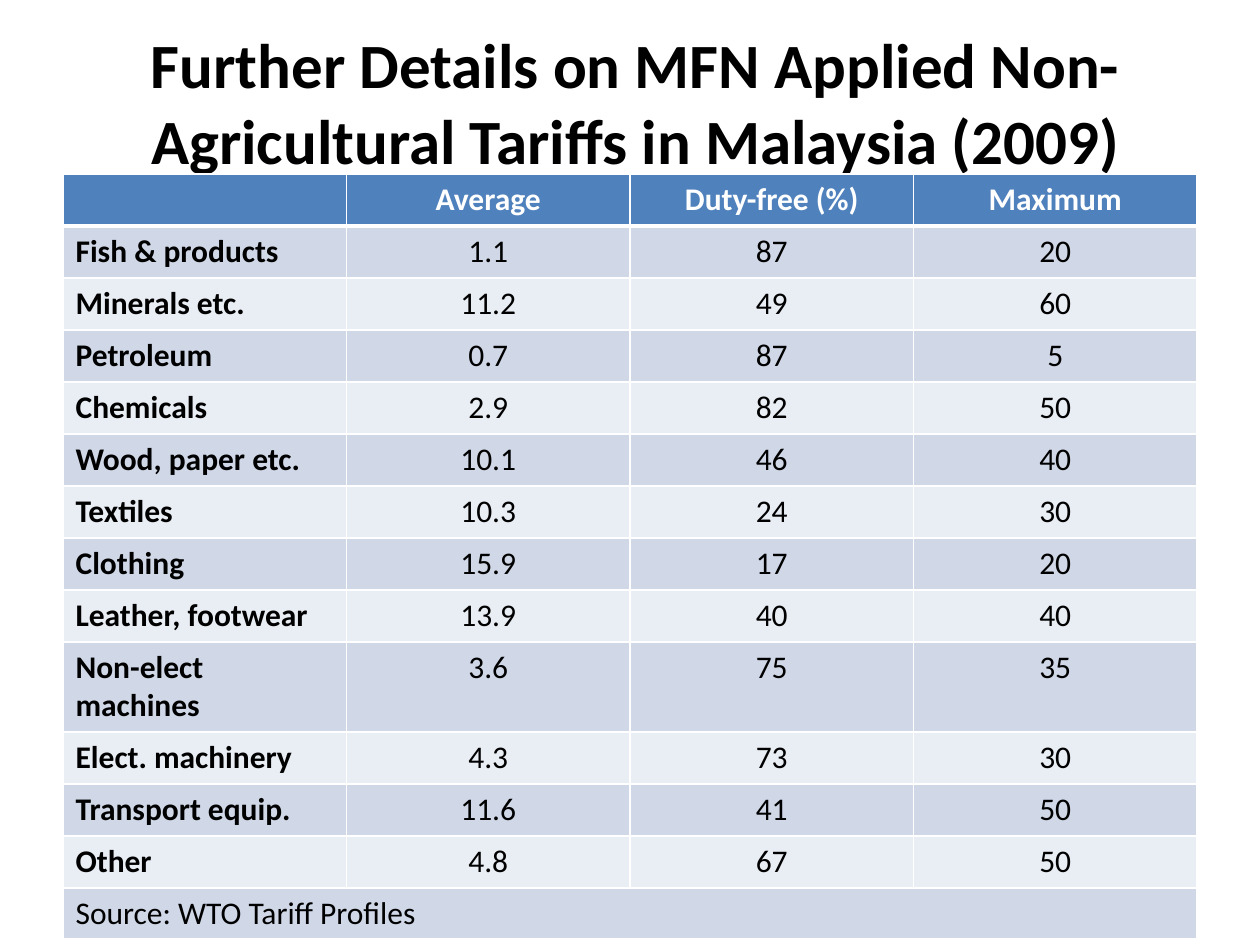
import pptx
import pptx.dml.color
import pptx.enum.text
import pptx.oxml.ns
import pptx.util
from lxml import etree

PX_PER_INCH = 126
FONT = "Calibri"
BLACK, WHITE = "000000", "FFFFFF"
HEADER_FILL = "4F81BD"
BAND_FILLS = ("D0D8E8", "E9EDF4")
ROW_HEIGHT, TALL_ROW_HEIGHT, SOURCE_ROW_HEIGHT = 52, 90, 49
TITLE = "Further Details on MFN Applied Non- Agricultural Tariffs in Malaysia (2009)"
SOURCE = "Source: WTO Tariff Profiles"
HEADINGS = ("", "Average", "Duty-free (%)", "Maximum")
TALL_PRODUCT = "Non-elect machines"
TARIFFS = (
    ("Fish & products", "1.1", "87", "20"),
    ("Minerals etc.", "11.2", "49", "60"),
    ("Petroleum", "0.7", "87", "5"),
    ("Chemicals", "2.9", "82", "50"),
    ("Wood, paper etc.", "10.1", "46", "40"),
    ("Textiles", "10.3", "24", "30"),
    ("Clothing", "15.9", "17", "20"),
    ("Leather, footwear", "13.9", "40", "40"),
    (TALL_PRODUCT, "3.6", "75", "35"),
    ("Elect. machinery", "4.3", "73", "30"),
    ("Transport equip.", "11.6", "41", "50"),
    ("Other", "4.8", "67", "50"),
)


def px(length):
    """Turn a length in px into EMU."""
    return pptx.util.Inches(length / PX_PER_INCH)


def rgb(value):
    """Turn a hex string into a colour."""
    return pptx.dml.color.RGBColor.from_string(value)


def write(frame, text, size, colour, bold, centred):
    """Fill a text frame with one formatted paragraph."""
    frame.text = text
    para = frame.paragraphs[0]
    align = pptx.enum.text.PP_ALIGN
    para.alignment = align.CENTER if centred else align.LEFT
    for span in para.runs:
        span.font.name = FONT
        span.font.size = pptx.util.Pt(size)
        span.font.bold = bold
        span.font.color.rgb = rgb(colour)


def set_borders(cell, top, bottom):
    """Give a cell white borders, with top and bottom widths in points."""
    properties = cell._tc.get_or_add_tcPr()
    qn = pptx.oxml.ns.qn
    for side, width in (("L", 1), ("R", 1), ("T", top), ("B", bottom)):
        line = etree.SubElement(properties, qn(f"a:ln{side}"), w=str(pptx.util.Pt(width)))
        fill = etree.SubElement(line, qn("a:solidFill"))
        etree.SubElement(fill, qn("a:srgbClr"), val=WHITE)


def add_title(page, left, top, width, height):
    """Add the slide title, centred in its box."""
    box = page.shapes.add_textbox(px(left), px(top), px(width), px(height))
    frame = box.text_frame
    frame.word_wrap = True
    frame.vertical_anchor = pptx.enum.text.MSO_ANCHOR.MIDDLE
    write(frame, TITLE, 36, BLACK, True, True)


def add_tariff_table(page, left, top, width):
    """Add the banded tariff table with its header and source rows."""
    rows = (HEADINGS, *TARIFFS, (SOURCE, "", "", ""))
    heights = [TALL_ROW_HEIGHT if row[0] == TALL_PRODUCT else ROW_HEIGHT for row in rows]
    heights[-1] = SOURCE_ROW_HEIGHT
    table = page.shapes.add_table(
        len(rows), len(HEADINGS), px(left), px(top), px(width), px(sum(heights))
    ).table
    for column in table.columns:
        column.width = px(width / len(HEADINGS))
    last = len(rows) - 1
    for i, row in enumerate(rows):
        table.rows[i].height = px(heights[i])
        header = i == 0
        for j, text in enumerate(row):
            cell = table.cell(i, j)
            set_borders(cell, 3 if i == 1 else 1, 3 if header else 1)
            cell.fill.solid()
            cell.fill.fore_color.rgb = rgb(HEADER_FILL if header else BAND_FILLS[(i - 1) % 2])
            bold = header or (j == 0 and i != last)
            write(cell.text_frame, text, 18, WHITE if header else BLACK, bold, header or j > 0)
    table.cell(last, 0).merge(table.cell(last, len(HEADINGS) - 1))


def main():
    """Build the slide and save the deck."""
    deck = pptx.Presentation()
    deck.slide_width, deck.slide_height = px(1260), px(945)
    page = deck.slides.add_slide(deck.slide_layouts[6])
    add_title(page, 74, 38, 1123, 127)
    add_tariff_table(page, 63, 174, 1134)
    deck.save("out.pptx")


if __name__ == "__main__":
    main()
